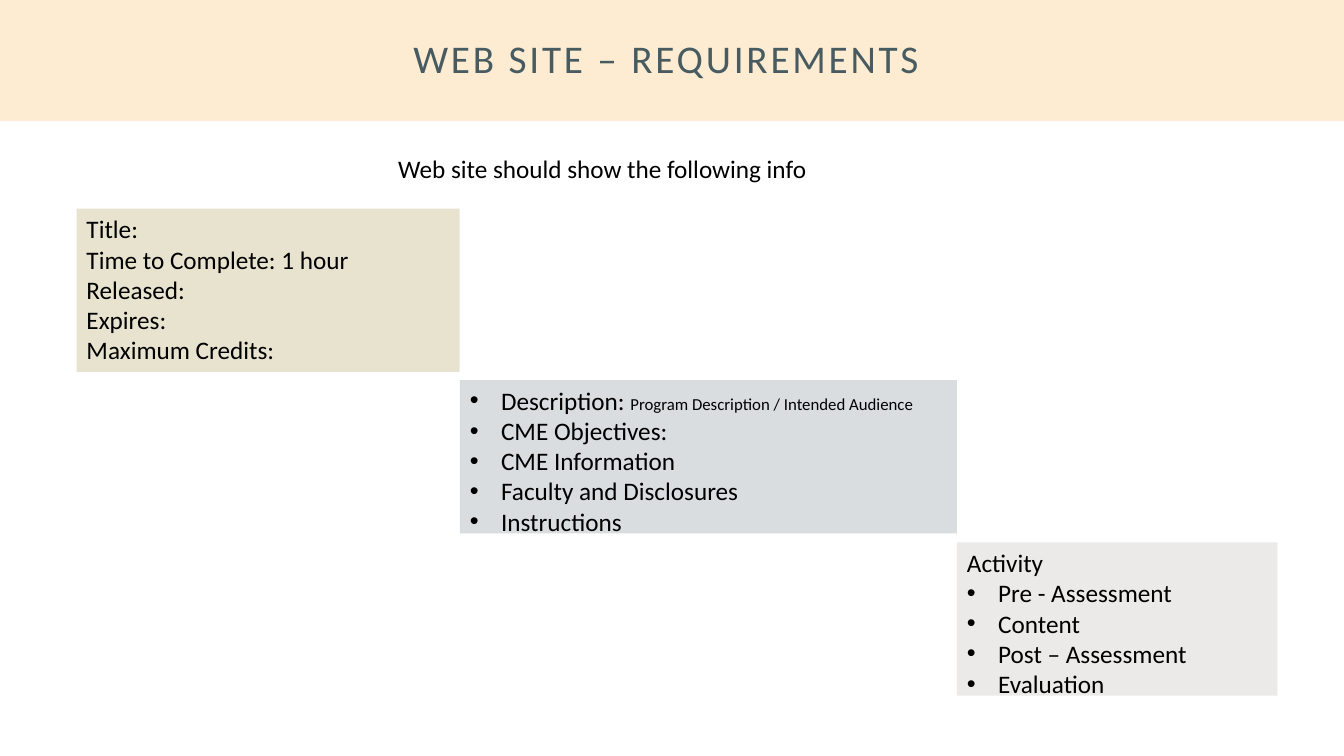
import dataclasses
import typing

import lxml.etree
import pptx
import pptx.dml.color
import pptx.enum.text
import pptx.oxml.ns
import pptx.util

SCALE = 9144  # EMU per px, 100 px to the inch
FONT = "Calibri"
INDENT = 31
HUES = {
    "band": "FDECD2",
    "head": "475B61",
    "text": "000000",
    "sand": "E8E3CE",
    "slate": "D9DDDF",
    "stone": "ECEAE8",
}


@dataclasses.dataclass(frozen=True)
class Line:
    text: str
    dot: bool = False
    note: str = ""


@dataclasses.dataclass(frozen=True)
class Panel:
    box: tuple[int, int, int, int]
    lines: tuple[Line, ...]
    fill: str = ""
    slot: int = 0  # body placeholder index, 0 for a text box


PANELS = (
    Panel((385, 147, 675, 40), (Line("Web site should show the following info"),)),
    Panel((76, 207, 380, 162), (
        Line("Title:"),
        Line("Time to Complete: 1 hour"),
        Line("Released:"),
        Line("Expires:"),
        Line("Maximum Credits:"),
    ), "sand"),
    Panel((456, 377, 493, 162), (
        Line("Description: ", True, "Program Description / Intended Audience"),
        Line("CME Objectives:", True),
        Line("CME Information", True),
        Line("Faculty and Disclosures", True),
        Line("Instructions", True),
    ), "slate", 1),
    Panel((949, 538, 318, 162), (
        Line("Activity"),
        Line("Pre - Assessment", True),
        Line("Content", True),
        Line("Post – Assessment", True),
        Line("Evaluation", True),
    ), "stone", 2),
)


def px(num: int) -> int:
    return pptx.util.Emu(num * SCALE)


def apply(item: typing.Any, form: dict[str, typing.Any]) -> None:
    for key, val in form.items():
        setattr(item, key, val)


def place(shape: typing.Any, box: tuple[int, int, int, int]) -> None:
    apply(shape, dict(zip(("left", "top", "width", "height"), map(px, box))))


def paint(shape: typing.Any, hue: str) -> None:
    shape.fill.solid()
    shape.fill.fore_color.rgb = pptx.dml.color.RGBColor.from_string(HUES[hue])


def add_run(para: typing.Any, text: str, size: int, hue: str = "text") -> typing.Any:
    run = para.add_run()
    run.text = text
    apply(run.font, {"name": FONT, "size": pptx.util.Pt(size), "bold": False})
    run.font.color.rgb = pptx.dml.color.RGBColor.from_string(HUES[hue])
    return run


def set_dot(para: typing.Any, dot: bool) -> None:
    props = para._p.get_or_add_pPr()
    step = px(INDENT) if dot else 0
    props.set("marL", str(step))
    props.set("indent", str(-step))
    tags = [("a:buFont", "typeface", "Arial"), ("a:buChar", "char", "•")]
    for tag, key, val in tags if dot else [("a:buNone", "", "")]:
        node = lxml.etree.SubElement(props, pptx.oxml.ns.qn(tag))
        if key:
            node.set(key, val)


def draw_title(slide: typing.Any) -> None:
    title = slide.shapes.title
    place(title, (0, 0, 1333, 120))
    paint(title, "band")
    frame = title.text_frame
    sides = ("left", "top", "right", "bottom")
    apply(frame, {f"margin_{side}": px(20) for side in sides})
    apply(frame, {
        "vertical_anchor": pptx.enum.text.MSO_ANCHOR.MIDDLE,
        "auto_size": pptx.enum.text.MSO_AUTO_SIZE.NONE,
    })
    para = frame.paragraphs[0]
    apply(para, {"alignment": pptx.enum.text.PP_ALIGN.CENTER, "line_spacing": 0.9})
    run = add_run(para, "WEB SITE – REQUIREMENTS ", 28, "head")
    run.font._element.set("spc", "200")


def draw_panel(slide: typing.Any, panel: Panel) -> None:
    if panel.slot:
        shape = slide.placeholders[panel.slot]
    else:
        shape = slide.shapes.add_textbox(0, 0, 0, 0)
    place(shape, panel.box)
    if panel.fill:
        paint(shape, panel.fill)
    frame = shape.text_frame
    apply(frame, {
        "word_wrap": True,
        "vertical_anchor": pptx.enum.text.MSO_ANCHOR.TOP,
        "auto_size": pptx.enum.text.MSO_AUTO_SIZE.SHAPE_TO_FIT_TEXT,
    })
    for pos, line in enumerate(panel.lines):
        para = frame.add_paragraph() if pos else frame.paragraphs[0]
        apply(para, {"space_before": pptx.util.Pt(0)})
        set_dot(para, line.dot)
        add_run(para, line.text, 18)
        if line.note:
            add_run(para, line.note, 12)


def main() -> None:
    deck = pptx.Presentation()
    apply(deck, {"slide_width": px(1333), "slide_height": px(750)})
    # Two Content layout: a title and two lists
    slide = deck.slides.add_slide(deck.slide_layouts[3])

    # Title band
    draw_title(slide)

    # Intro and stepped panels
    for panel in PANELS:
        draw_panel(slide, panel)

    deck.save("out.pptx")


if __name__ == "__main__":
    main()
